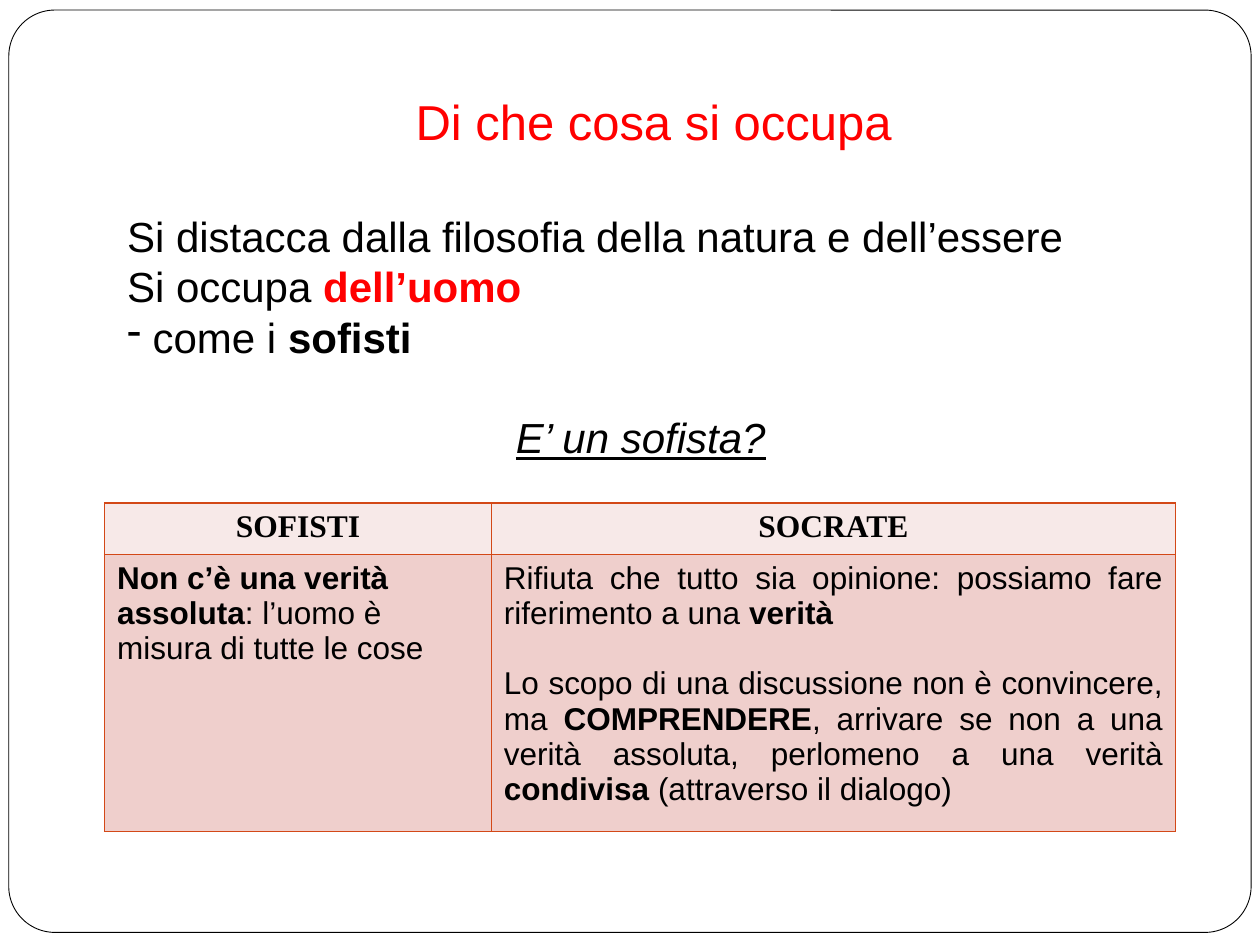
from dataclasses import dataclass

from lxml import etree
from pptx import Presentation
from pptx.dml.color import RGBColor
from pptx.enum.shapes import MSO_SHAPE
from pptx.enum.text import MSO_AUTO_SIZE, PP_ALIGN
from pptx.oxml.ns import qn
from pptx.util import Inches, Pt

ROUNDED = MSO_SHAPE.ROUNDED_RECTANGLE
FIT_SHAPE = MSO_AUTO_SIZE.SHAPE_TO_FIT_TEXT
LEFT, CENTER, JUSTIFY = PP_ALIGN.LEFT, PP_ALIGN.CENTER, PP_ALIGN.JUSTIFY
GRID_COLUMNS, GRID_ROWS = 100, 75


@dataclass(frozen=True)
class Theme:
    sans: str = "Arial"
    serif: str = "Times New Roman"
    title_size: float = 28
    body_size: float = 24
    table_size: float = 18
    white: str = "FFFFFF"
    black: str = "000000"
    accent: str = "FF0000"
    header_fill: str = "F7E9E8"
    cell_fill: str = "EFCFCC"
    border: str = "D34817"


THEME = Theme()


@dataclass(frozen=True)
class Span:
    text: str
    bold: bool = False
    color: str = None


@dataclass(frozen=True)
class Para:
    spans: tuple
    align: PP_ALIGN = LEFT
    before: float = 0
    bullet: str = None
    italic: bool = False
    underline: bool = False


class SlideBuilder:
    """Draws on one slide; lengths are columns and rows of the grid."""

    def __init__(self, deck, theme):
        self.theme = theme
        self.page = deck.slides.add_slide(deck.slide_layouts[6])
        self.column = deck.slide_width / GRID_COLUMNS
        self.row = deck.slide_height / GRID_ROWS

    def area(self, left, top, width, height):
        return (round(left * self.column), round(top * self.row),
                round(width * self.column), round(height * self.row))

    def frame(self, *place, radius):
        box = self.page.shapes.add_shape(ROUNDED, *self.area(*place))
        box.adjustments[0] = radius
        box.shadow.inherit = False
        box.fill.solid()
        box.fill.fore_color.rgb = RGBColor.from_string(self.theme.white)
        box.line.color.rgb = RGBColor.from_string(self.theme.black)
        box.line.width = Pt(0.5)

    def text(self, *place, paras, size, wrap=True):
        box = self.page.shapes.add_textbox(*self.area(*place))
        box.text_frame.word_wrap = wrap
        box.text_frame.auto_size = FIT_SHAPE
        self.fill_text(box.text_frame, paras, size, self.theme.sans)

    def table(self, *place, widths, heights, rows):
        table = self.page.shapes.add_table(
            len(rows), len(widths), *self.area(*place)).table
        for column, width in zip(table.columns, widths):
            column.width = round(width * self.column)
        for row, height in zip(table.rows, heights):
            row.height = round(height * self.row)
        for r, contents in enumerate(rows):
            fill = self.theme.cell_fill if r else self.theme.header_fill
            font = self.theme.sans if r else self.theme.serif
            for c, paras in enumerate(contents):
                cell = table.cell(r, c)
                cell.fill.solid()
                cell.fill.fore_color.rgb = RGBColor.from_string(fill)
                self.outline(cell)
                self.fill_text(cell.text_frame, paras,
                               self.theme.table_size, font)

    def outline(self, cell):
        props = cell._tc.get_or_add_tcPr()
        for index, side in enumerate(("lnL", "lnR", "lnT", "lnB")):
            line = etree.Element(qn(f"a:{side}"), w=str(Pt(1)))
            fill = etree.SubElement(line, qn("a:solidFill"))
            etree.SubElement(fill, qn("a:srgbClr"), val=self.theme.border)
            props.insert(index, line)

    def fill_text(self, text_frame, paras, size, font):
        for index, content in enumerate(paras):
            para = text_frame.add_paragraph() if index else text_frame.paragraphs[0]
            para.alignment = content.align
            para.space_before = Pt(content.before)
            para.font.name = font
            para.font.size = Pt(size)
            para.font.italic = content.italic
            para.font.underline = content.underline
            para.font.color.rgb = RGBColor.from_string(self.theme.black)
            if content.bullet:
                mark = etree.Element(qn("a:buChar"), char=content.bullet)
                para.font._element.addprevious(mark)
            for piece in content.spans:
                span = para.add_run()
                span.text = piece.text
                span.font.bold = piece.bold
                if piece.color:
                    span.font.color.rgb = RGBColor.from_string(piece.color)


def main():
    deck = Presentation()
    deck.slide_width, deck.slide_height = Inches(10), Inches(7.5)
    slide = SlideBuilder(deck, THEME)

    slide.frame(0.7, 0.8, 98.6, 73.2, radius=0.05)
    slide.text(32, 6.8, 40.3, 5.7, size=THEME.title_size, wrap=False, paras=[
        Para((Span("Di che cosa si occupa", color=THEME.accent),), JUSTIFY)])
    slide.text(9.1, 16.2, 83.5, 21.2, size=THEME.body_size, paras=[
        Para((Span("Si distacca dalla filosofia della natura e dell’essere"),)),
        Para((Span("Si occupa "), Span("dell’uomo", True, THEME.accent))),
        Para((Span(" come i "), Span("sofisti", True)), bullet="-"),
        Para((Span("E’ un sofista?"),), CENTER, before=28.8,
             italic=True, underline=True)])

    headers = [[Para((Span(name, True),), CENTER)]
               for name in ("SOFISTI", "SOCRATE")]
    sophists = [Para((Span("Non c’è una verità assoluta", True),
                      Span(": l’uomo è misura di tutte le cose")))]
    socrates = [
        Para((Span("Rifiuta che tutto sia opinione: possiamo fare "
                   "riferimento a una "), Span("verità", True)), JUSTIFY),
        Para((Span("Lo scopo di una discussione non è convincere, ma "),
              Span("COMPRENDERE", True),
              Span(", arrivare se non a una verità assoluta, perlomeno a "
                   "una verità "),
              Span("condivisa ", True),
              Span("(attraverso il dialogo)")), JUSTIFY, before=20)]
    slide.table(8.3, 39.9, 85, 26.1, widths=(30.7, 54.3), heights=(4.1, 22),
                rows=[headers, [sophists, socrates]])
    deck.save("out.pptx")


if __name__ == "__main__":
    main()
